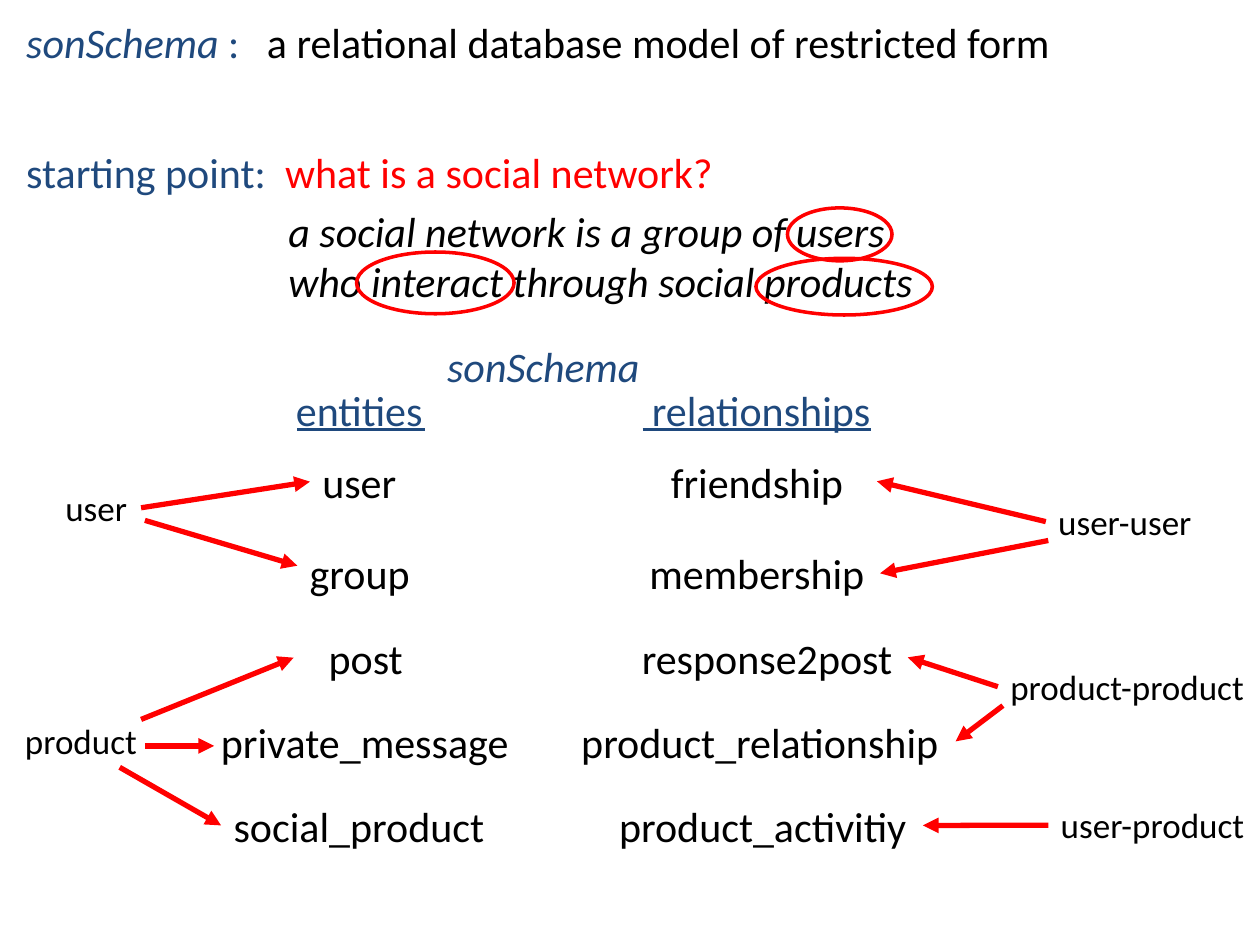
from pptx import Presentation
from pptx.dml.color import RGBColor
from pptx.enum.shapes import MSO_CONNECTOR as Line, MSO_SHAPE as Shape
from pptx.enum.text import MSO_AUTO_SIZE as Fit
from pptx.oxml.ns import qn
from pptx.util import Inches, Pt
from lxml.etree import SubElement

BLACK = RGBColor(0, 0, 0)
BLUE = RGBColor(0x1F, 0x49, 0x7D)
RED = RGBColor(0xFF, 0, 0)
LEFT, RIGHT = 1, 3  # connection sites

deck = Presentation()
deck.slide_width, deck.slide_height = Inches(10), Inches(7.5)
slide = deck.slides.add_slide(deck.slide_layouts[6])
shapes = slide.shapes

# Grid of 100 columns by 75 rows
COL = deck.slide_width / 100
ROW = deck.slide_height / 75


def place(x, y, w, h):
    return int(x * COL), int(y * ROW), int(w * COL), int(h * ROW)


def text(lines, x, y, w, h=5, size=24, color=BLACK, italic=False):
    """Each line is a string or a list of (string, color, italic) runs."""
    box = shapes.add_textbox(*place(x, y, w, h))
    frame = box.text_frame
    frame.word_wrap = False
    frame.auto_size = Fit.SHAPE_TO_FIT_TEXT
    for i, line in enumerate([lines] if isinstance(lines, str) else lines):
        para = frame.add_paragraph() if i else frame.paragraphs[0]
        runs = [(line, color, italic)] if isinstance(line, str) else line
        for words, tint, slant in runs:
            run = para.add_run()
            run.text = words
            font = run.font
            font.name, font.size, font.italic = "Calibri", Pt(size), slant
            font.color.rgb = tint
    return box


def rule(start, end, color=BLUE, width=2, head=False):
    """Each end is a grid point or a (shape, side) pair to join."""
    joins = [not isinstance(p[0], (int, float)) for p in (start, end)]
    (x1, y1), (x2, y2) = [(0, 0) if j else p
                          for p, j in zip((start, end), joins)]
    line = shapes.add_connector(Line.STRAIGHT, int(x1 * COL), int(y1 * ROW),
                                int(x2 * COL), int(y2 * ROW))
    if joins[0]:
        line.begin_connect(*start)
    if joins[1]:
        line.end_connect(*end)
    line.line.color.rgb = color
    line.line.width = Pt(width)
    props = line._element.spPr
    if head:
        SubElement(props.find(qn("a:ln")), qn("a:tailEnd"), type="triangle")
    SubElement(props, qn("a:effectLst"))


def ring(x, y, w, h):
    oval = shapes.add_shape(Shape.OVAL, *place(x, y, w, h))
    oval.shadow.inherit = False
    oval.fill.background()
    oval.line.color.rgb = RED
    oval.line.width = Pt(2)


def intro(x, y):
    """Title line, question and ringed definition."""
    text([[("sonSchema", BLUE, True), (" :", BLUE, False)]], x, y, 19.1)
    text("a relational database model of restricted form", x + 19.1, y, 64.8)
    text([[("starting point:  ", BLUE, False),
           ("what is a social network?", RED, False)]], x, y + 10.3, 56.9)
    text(["a social network is a group of users",
          "who interact through social products"],
         x + 20.8, y + 15, 52.1, 9.1, italic=True)
    for dx, dy, w, h in [(61.4, 15.7, 8.3, 4.2), (27.2, 19.2, 12.5, 4.9),
                         (58.9, 19.7, 14, 4.5)]:
        ring(x + dx, y + dy, w, h)


def column(mid, y, head, wide, line, items):
    """Underlined heading over five items, each (name, width, shift)."""
    text(head, mid - wide / 2, y, wide, color=BLUE)
    rule((line[0], y + 4.1), (line[1], y + 4.1))
    return [text(name, mid + shift - w / 2, y + 13 + 6.67 * (i - 1) - .6 * (not i), w)
            for i, (name, w, shift) in enumerate(items)]


def labels(items):
    """Small side labels, each (name, x, y, width)."""
    return [text(name, x, y, w, 4.4, size=20) for name, x, y, w in items]


def arrows(pairs):
    for start, end in pairs:
        rule(start, end, RED, 3, head=True)


intro(1.1, .8)
text("sonSchema", 34.5, 26.5, 17.5, color=BLUE, italic=True)

# Schema columns
user, group, post, message, social = column(
    28.6, 30, "entities", 12.2, (23.6, 33.7),
    [("user", 8, 0), ("group", 10, 0), ("post", 8, .5),
     ("private_message", 25.1, .5), ("social_product", 22.1, 0)])
friend, member, response, related, active = column(
    60.5, 30, "relationships", 19.5, (51, 69.1),
    [("friendship", 15.9, -.3), ("membership", 19.3, -.3),
     ("response2post", 22.1, .5), ("product_relationship", 30.7, 0),
     ("product_activitiy", 25.1, .2)])

# Sources of the entities
person, product = labels([("user", 4.2, 38.1, 7), ("product", 1, 56.6, 11)])
arrows([((person, RIGHT), (user, LEFT)),
        ((11.5, 41.3), (23.6, 44.9)),
        ((11.2, 57.1), (23.3, 52.2)),
        ((11.5, 59.2), (17, 59.2)),
        ((9.5, 60.9), (social, LEFT))])

# Sources of the relationships
pair, mixed, goods = labels([("user-user", 83, 39.2, 12.8),
                             ("user-product", 83.2, 63.3, 16.8),
                             ("product-product", 79.2, 52.3, 20.8)])
arrows([((pair, LEFT), (69.6, 38.2)),
        ((83.2, 42.9), (member, RIGHT)),
        ((goods, LEFT), (response, RIGHT)),
        ((79.6, 56), (related, RIGHT)),
        ((mixed, LEFT), (active, RIGHT))])

deck.save("out.pptx")
